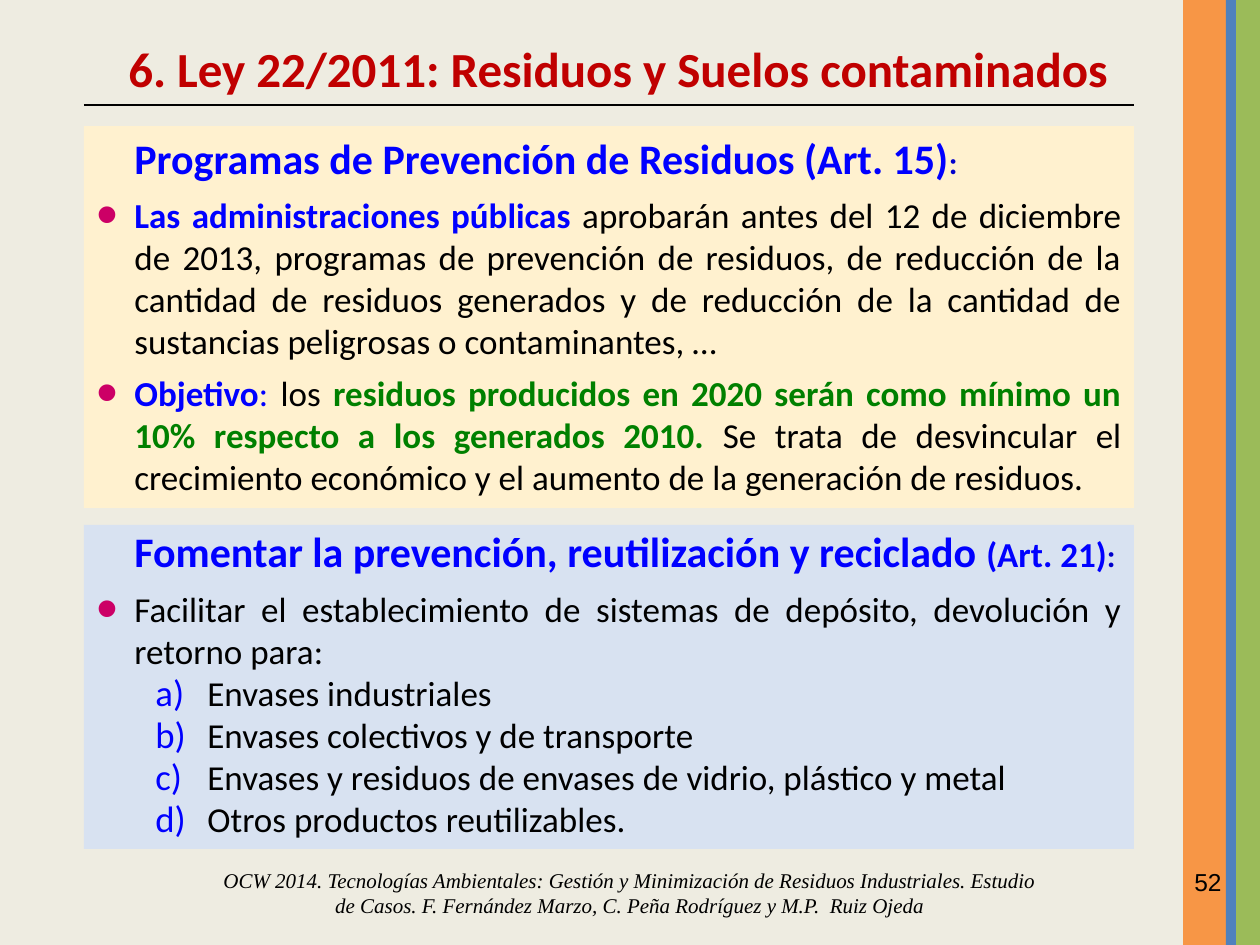
from dataclasses import dataclass
from typing import Optional

from lxml import etree
from pptx import Presentation
from pptx import util as u
from pptx.dml.color import RGBColor
from pptx.enum import shapes, text
from pptx.oxml.ns import qn

PX_PER_INCH = 126
CREAM = RGBColor(0xEE, 0xEC, 0xE1)
ORANGE = RGBColor(0xF7, 0x96, 0x46)
STRIPE_BLUE = RGBColor(0x4F, 0x81, 0xBD)
STRIPE_GREEN = RGBColor(0x9B, 0xBB, 0x59)
PALE_YELLOW = RGBColor(0xFF, 0xF1, 0xCF)
PALE_BLUE = RGBColor(0xD8, 0xE2, 0xF1)
BLACK = RGBColor(0, 0, 0)
RED = RGBColor(0xC0, 0, 0)
BLUE = RGBColor(0, 0, 0xFF)
DARK_BLUE = RGBColor(0, 0, 0xCC)
GREEN = RGBColor(0, 0x80, 0)
MAGENTA = RGBColor(0xCC, 0, 0x66)

LEFT, ALIGN = text.PP_ALIGN.LEFT, text.PP_ALIGN


@dataclass(frozen=True)
class Box:
    left: int
    top: int
    width: int
    height: int


@dataclass(frozen=True)
class Run:
    text: str
    size: int = 20
    color: RGBColor = BLACK
    bold: bool = False
    italic: bool = False
    font: str = "Calibri"


@dataclass(frozen=True)
class Bullet:
    tag: str
    attribute: str
    value: str
    font: str
    color: RGBColor
    percent: int


@dataclass(frozen=True)
class Para:
    runs: tuple[Run, ...]
    align: text.PP_ALIGN = ALIGN.JUSTIFY
    margin: int = 38
    indent: int = 0
    before: int = 0
    spacing: Optional[float] = None
    level: int = 0
    bullet: Optional[Bullet] = None


DOT = Bullet("a:buChar", "char", "•", "Arial", MAGENTA, 175)
LETTER = Bullet("a:buAutoNum", "type", "alphaLcParenR", "Calibri", BLUE, 105)


def px(length: int) -> u.Emu:
    return u.Emu(round(length * u.Inches(1) / PX_PER_INCH))


def place(box: Box) -> tuple[u.Emu, ...]:
    return px(box.left), px(box.top), px(box.width), px(box.height)


def dotted(*runs: Run) -> Para:
    return Para(runs, indent=-38, before=6, bullet=DOT)


def lettered(item: str) -> Para:
    return Para((Run(item),), margin=111, indent=-52, level=1, bullet=LETTER)


def plain(run: Run, align: text.PP_ALIGN = LEFT) -> Para:
    return Para((run,), align=align, margin=0)


def add_bullet(properties, bullet: Bullet) -> None:
    color = etree.SubElement(properties, qn("a:buClr"))
    etree.SubElement(color, qn("a:srgbClr"), val=str(bullet.color))
    etree.SubElement(properties, qn("a:buSzPct"), val=str(bullet.percent * 1000))
    etree.SubElement(properties, qn("a:buFont"), typeface=bullet.font)
    etree.SubElement(properties, qn(bullet.tag), {bullet.attribute: bullet.value})


def write(shape, paras: tuple[Para, ...], anchor=text.MSO_ANCHOR.TOP) -> None:
    frame = shape.text_frame
    frame.word_wrap = True
    frame.vertical_anchor = anchor
    for index, para in enumerate(paras):
        paragraph = frame.add_paragraph() if index else frame.paragraphs[0]
        paragraph.alignment = para.align
        paragraph.level = para.level
        paragraph.space_before = u.Pt(para.before)
        if para.spacing:
            paragraph.line_spacing = para.spacing
        properties = paragraph._p.get_or_add_pPr()
        properties.set("marL", str(px(para.margin)))
        properties.set("indent", str(px(para.indent)))
        if para.bullet:
            add_bullet(properties, para.bullet)
        for item in para.runs:
            run = paragraph.add_run()
            run.text = item.text
            run.font.name = item.font
            run.font.size = u.Pt(item.size)
            run.font.bold = item.bold
            run.font.italic = item.italic
            run.font.color.rgb = item.color


def add_rectangle(slide, box: Box, color: RGBColor):
    shape = slide.shapes.add_shape(shapes.MSO_SHAPE.RECTANGLE, *place(box))
    shape.shadow.inherit = False
    shape.fill.solid()
    shape.fill.fore_color.rgb = color
    shape.line.fill.background()
    return shape


def add_rule(slide, left: int, right: int, y: int) -> None:
    line = slide.shapes.add_connector(
        shapes.MSO_CONNECTOR.STRAIGHT, px(left), px(y), px(right), px(y))
    line.line.color.rgb = BLACK
    line.line.width = u.Pt(0.75)
    etree.SubElement(line._element.spPr, qn("a:effectLst"))


STRIPES = (
    (Box(1183, 0, 43, 945), ORANGE),
    (Box(1236, 0, 24, 945), STRIPE_GREEN),
    (Box(1226, 0, 10, 945), STRIPE_BLUE),
)

PREVENTION = (
    Para((Run("Programas de Prevención de Residuos (Art. 15)", 24, BLUE, True),
          Run(":", 18, DARK_BLUE, True))),
    dotted(Run("Las administraciones públicas ", color=BLUE, bold=True),
           Run("aprobarán antes del 12 de diciembre de 2013, programas de prevención "
               "de residuos, de reducción de la cantidad de residuos generados y de "
               "reducción de la cantidad de sustancias peligrosas o contaminantes, …")),
    dotted(Run("Objetivo", color=BLUE, bold=True),
           Run(":", color=BLUE),
           Run(" los "),
           Run("residuos producidos en 2020 serán como mínimo un 10% respecto a los "
               "generados 2010. ", color=GREEN, bold=True),
           Run("Se trata de desvincular el crecimiento económico y el aumento de la "
               "generación de residuos.")),
)

RECYCLING = (
    Para((Run("Fomentar la prevención, reutilización y reciclado ", 24, BLUE, True),
          Run("(Art. 21)", 20, BLUE, True),
          Run(":", 18, DARK_BLUE, True)), spacing=0.9),
    dotted(Run("Facilitar el establecimiento de sistemas de depósito, devolución y "
               "retorno para:")),
    *map(lettered, (
        "Envases industriales",
        "Envases colectivos y de transporte",
        "Envases y residuos de envases de vidrio, plástico y metal",
        "Otros productos reutilizables.",
    )),
)

PANELS = (
    (Box(84, 126, 1050, 382), PALE_YELLOW, PREVENTION),
    (Box(84, 525, 1050, 324), PALE_BLUE, RECYCLING),
)

TITLE = Run("6. Ley 22/2011: Residuos y Suelos contaminados", 28, RED, True)
FOOTER = Run("OCW 2014. Tecnologías Ambientales: Gestión y Minimización de Residuos "
             "Industriales. Estudio de Casos. F. Fernández Marzo, C. Peña Rodríguez y "
             "M.P.  Ruiz Ojeda", 12, italic=True, font="Times New Roman")
LABELS = (
    (Box(116, 32, 1018, 72), plain(TITLE), text.MSO_ANCHOR.TOP),
    (Box(1182, 861, 78, 65), plain(Run("52", 14, font="Arial")), text.MSO_ANCHOR.TOP),
    (Box(210, 861, 840, 63), plain(FOOTER, ALIGN.CENTER), text.MSO_ANCHOR.MIDDLE),
)


def main() -> None:
    presentation = Presentation()
    presentation.slide_width, presentation.slide_height = px(1260), px(945)
    slide = presentation.slides.add_slide(presentation.slide_layouts[6])
    slide.background.fill.solid()
    slide.background.fill.fore_color.rgb = CREAM
    for box, color in STRIPES:
        add_rectangle(slide, box, color)
    add_rule(slide, 84, 1134, 105)
    for box, color, paras in PANELS:
        write(add_rectangle(slide, box, color), paras)
    for box, para, anchor in LABELS:
        write(slide.shapes.add_textbox(*place(box)), (para,), anchor)
    presentation.save("out.pptx")


if __name__ == "__main__":
    main()
